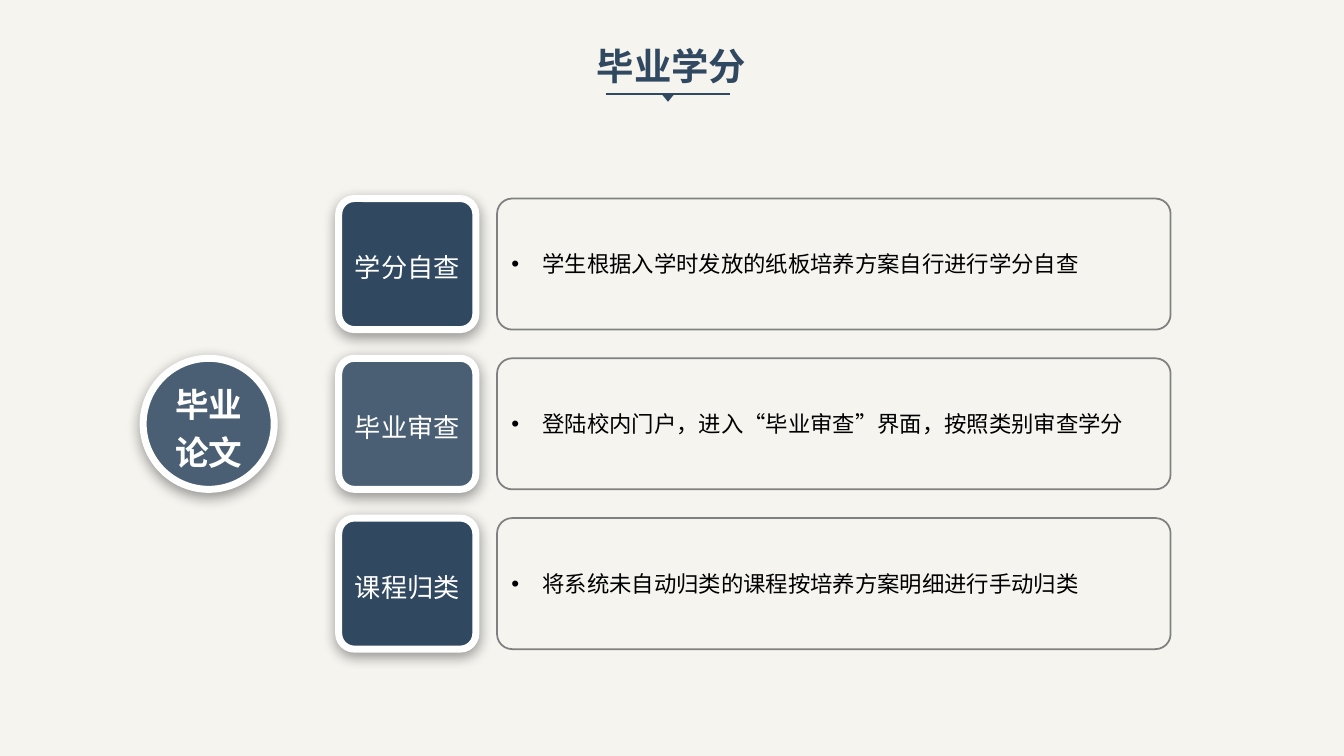
from lxml import etree
from pptx import Presentation
from pptx.dml.color import RGBColor
from pptx.enum.shapes import MSO_CONNECTOR, MSO_SHAPE
from pptx.enum.text import MSO_ANCHOR, MSO_AUTO_SIZE, PP_ALIGN
from pptx.oxml.ns import qn
from pptx.util import Inches, Pt

TITLE = "毕业学分"
TOPIC = "毕业论文"
STEPS = [
    ("学分自查", "学生根据入学时发放的纸板培养方案自行进行学分自查"),
    ("毕业审查", "登陆校内门户，进入“毕业审查”界面，按照类别审查学分"),
    ("课程归类", "将系统未自动归类的课程按培养方案明细进行手动归类"),
]

FONT = "Noto Sans CJK SC"
NAVY, SLATE, WHITE = "304860", "4A5F74", "FFFFFF"
GRAY, BLACK, PAPER = "808080", "000000", "F5F4EF"
ROUND, OVAL = MSO_SHAPE.ROUNDED_RECTANGLE, MSO_SHAPE.OVAL
TRIANGLE, STRAIGHT = MSO_SHAPE.ISOSCELES_TRIANGLE, MSO_CONNECTOR.STRAIGHT
CENTER, MIDDLE, GROW = PP_ALIGN.CENTER, MSO_ANCHOR.MIDDLE, MSO_AUTO_SIZE.SHAPE_TO_FIT_TEXT

SLIDE_W, SLIDE_H = 13.33, 7.5
TOP, BOTTOM, ROW_H = 1.97, 6.44, 1.3
PITCH = (BOTTOM - TOP - ROW_H) / (len(STEPS) - 1)
LABEL_X, LABEL_W = 3.36, 1.36
DETAIL_X, DETAIL_W = 4.93, 6.68
CIRCLE_X = 1.42
RULE_X, RULE_Y, RULE_W = 6.01, 0.93, 1.23
MARK_W, MARK_H = 0.13, 0.08
INDENT = 0.31


def rgb(value):
    return RGBColor.from_string(value)


def add_run(p, text, size, color, bold=False):
    r = p.add_run()
    r.text = text
    r.font.size = Pt(size)
    r.font.bold = bold
    r.font.color.rgb = rgb(color)
    r.font.name = FONT
    etree.SubElement(r.font._element, qn("a:ea"), typeface=FONT)


def add_box(kind, box, fill=None, line=None, width=0, adj=None):
    sp = slide.shapes.add_shape(kind, *map(Inches, box))
    sp.shadow.inherit = False
    if fill:
        sp.fill.solid()
        sp.fill.fore_color.rgb = rgb(fill)
    else:
        sp.fill.background()
    if line:
        sp.line.color.rgb = rgb(line)
        sp.line.width = Pt(width)
    else:
        sp.line.fill.background()
    if adj:
        sp.adjustments[0] = adj
    tf = sp.text_frame
    tf.word_wrap = True
    tf.vertical_anchor = MIDDLE
    return sp


def add_shadow(sp):
    effects = sp._element.spPr.find(qn("a:effectLst"))
    shadow = etree.SubElement(effects, qn("a:outerShdw"), blurRad=str(Pt(10)),
                              dist=str(Pt(3)), dir="5400000", algn="ctr", rotWithShape="0")
    color = etree.SubElement(shadow, qn("a:srgbClr"), val=BLACK)
    etree.SubElement(color, qn("a:alpha"), val="40000")


def add_badge(kind, box, fill, text, size, bold=False, adj=None):
    sp = add_box(kind, box, fill, WHITE, 5, adj)
    add_shadow(sp)
    p = sp.text_frame.paragraphs[0]
    p.alignment = CENTER
    p.line_spacing = 1.2
    add_run(p, text, size, WHITE, bold)


def add_detail(box, text):
    sp = add_box(ROUND, box, None, GRAY, 1.25, 0.115)
    p = sp.text_frame.paragraphs[0]
    p.alignment = PP_ALIGN.LEFT
    p.level = 1
    pPr = p._p.get_or_add_pPr()
    pPr.set("marL", str(Inches(INDENT)))
    pPr.set("indent", str(-Inches(INDENT)))
    etree.SubElement(pPr, qn("a:buFont"), typeface="Arial")
    etree.SubElement(pPr, qn("a:buChar"), char="•")
    add_run(p, text, 16, BLACK)


def add_heading():
    ends = (RULE_X, RULE_Y, RULE_X + RULE_W, RULE_Y)
    rule = slide.shapes.add_connector(STRAIGHT, *map(Inches, ends))
    rule.line.color.rgb = rgb(NAVY)
    rule.line.width = Pt(1.5)
    etree.SubElement(rule._element.spPr, qn("a:effectLst"))
    mark_x = RULE_X + (RULE_W - MARK_W) / 2
    add_box(TRIANGLE, (mark_x, RULE_Y, MARK_W, MARK_H), NAVY).rotation = 180
    sp = slide.shapes.add_textbox(*map(Inches, (5.82, 0.38, 1.7, 0.55)))
    tf = sp.text_frame
    tf.word_wrap = False
    tf.auto_size = GROW
    add_run(tf.paragraphs[0], TITLE, 26.7, NAVY, True)


prs = Presentation()
prs.slide_width, prs.slide_height = Inches(SLIDE_W), Inches(SLIDE_H)
slide = prs.slides.add_slide(prs.slide_layouts[6])
slide.background.fill.solid()
slide.background.fill.fore_color.rgb = rgb(PAPER)

add_heading()
for i, (label, detail) in enumerate(STEPS):
    y = TOP + i * PITCH
    add_detail((DETAIL_X, y, DETAIL_W, ROW_H), detail)
    add_badge(ROUND, (LABEL_X, y, LABEL_W, ROW_H), (NAVY, SLATE)[i % 2], label, 18.7, adj=0.119)
add_badge(OVAL, (CIRCLE_X, TOP + PITCH, ROW_H, ROW_H), SLATE, TOPIC, 24, True)

prs.save("out.pptx")
